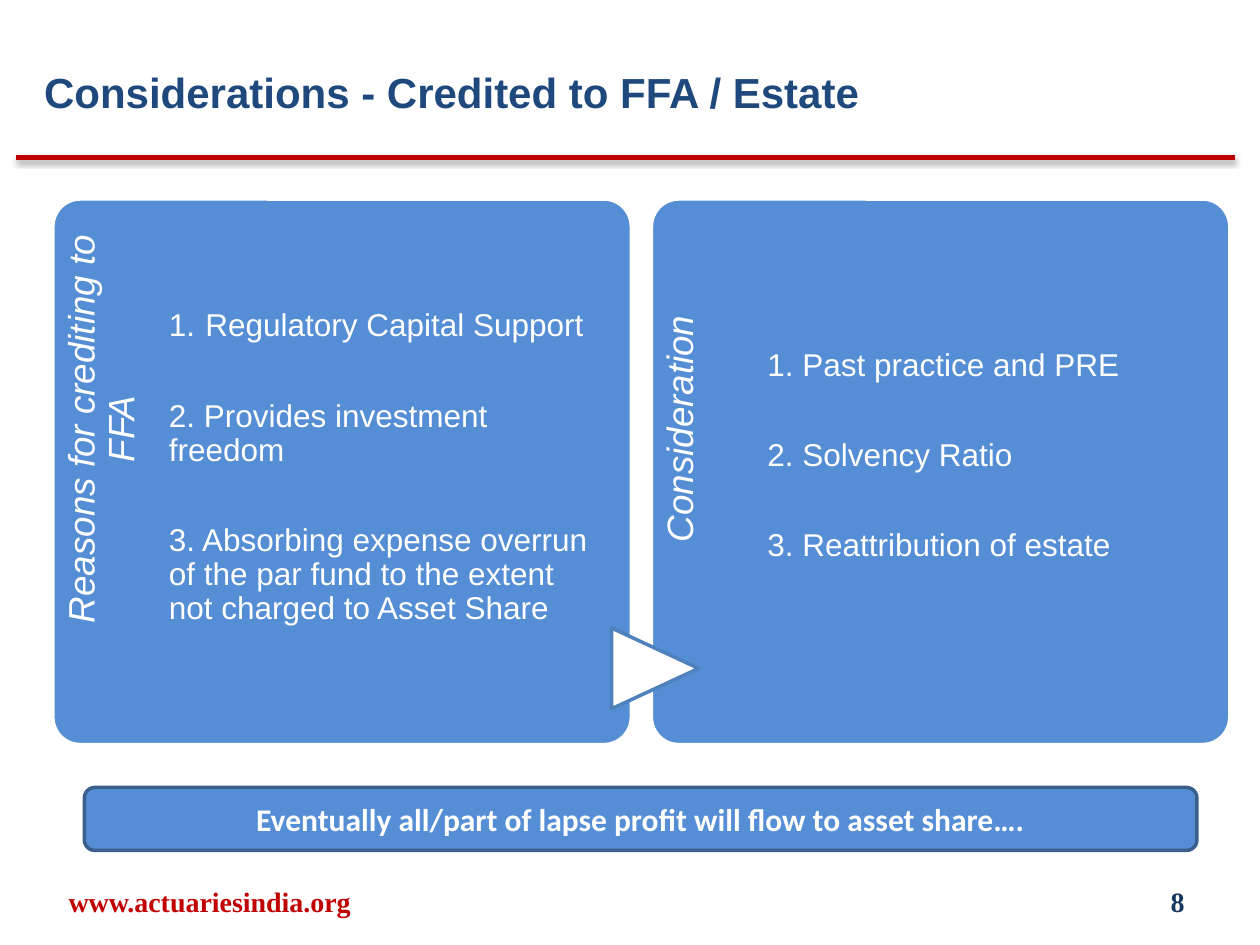
from lxml.etree import SubElement
from pptx import Presentation
from pptx.dml.color import RGBColor
from pptx.enum.shapes import MSO_CONNECTOR, MSO_SHAPE
from pptx.enum.text import MSO_ANCHOR, MSO_AUTO_SIZE, PP_ALIGN
from pptx.oxml import parse_xml
from pptx.oxml.ns import nsdecls, qn
from pptx.util import Inches, Pt

COLORS = {"red": "C00000", "navy": "17375E", "title": "1F497D", "panel": "558ED5",
          "white": "FFFFFF", "arrow": "4F81BD", "edge": "3A5F8C"}

TITLE = "Considerations - Credited to FFA / Estate"
# Each item is a list of (text, size) runs; "top" is the room above the first item.
PANELS = [
    {"label": "Reasons for crediting to FFA", "top": 0.84, "items": [
        [("1.", 18), (" ", 21), ("Regulatory Capital Support", 18)],
        [("2. Provides investment freedom", 18)],
        [("3. Absorbing expense overrun of the par fund to the extent "
          "not charged to Asset Share", 18)]]},
    {"label": "Consideration", "top": 1.19, "items": [
        [("1. Past practice and PRE", 18)],
        [("2. Solvency Ratio", 18)],
        [("3. Reattribution of estate", 18)]]},
]
CONCLUSION = "Eventually all/part of lapse profit will flow to asset share…."
FOOTERS = [("www.actuariesindia.org", 0.08, 3.17, PP_ALIGN.CENTER, "red"),
           ("8", 7.17, 2.33, PP_ALIGN.RIGHT, "navy")]

PANEL_LEFT, PANEL_TOP, PANEL_W, PANEL_H, PANEL_STEP = 0.42, 1.58, 4.59, 4.33, 4.75
LABEL_W, LABEL_H = 3.55, 0.92


def rgb(name):
    return RGBColor.from_string(COLORS[name])


def add_run(p, text, size, color, font="Arial", bold=False, italic=False):
    r = p.add_run()
    r.text = text
    r.font.size, r.font.name = Pt(size), font
    r.font.bold, r.font.italic = bold, italic
    r.font.color.rgb = rgb(color)


def place(sp, left, top, width, height):
    sp.left, sp.top = Inches(left), Inches(top)
    sp.width, sp.height = Inches(width), Inches(height)


def set_frame(tf, anchor, margins=(0.1, 0.05, 0.1, 0.05)):
    """Wrap the text, anchor it and set left, top, right, bottom margins."""
    tf.word_wrap = True
    tf.auto_size = MSO_AUTO_SIZE.NONE
    tf.vertical_anchor = anchor
    tf.margin_left, tf.margin_top, tf.margin_right, tf.margin_bottom = map(Inches, margins)


def add_box(slide, kind, box, fill, edge):
    sp = slide.shapes.add_shape(kind, *map(Inches, box))
    sp.shadow.inherit = False
    sp.fill.solid()
    sp.fill.fore_color.rgb = rgb(fill)
    sp.line.color.rgb = rgb(edge)
    sp.line.width = Pt(2)
    return sp


def add_text(slide, box, anchor, align, margins=(0.1, 0.05, 0.1, 0.05)):
    """Add a text box and return it with its first paragraph."""
    sp = slide.shapes.add_textbox(*map(Inches, box))
    set_frame(sp.text_frame, anchor, margins)
    p = sp.text_frame.paragraphs[0]
    p.alignment = align
    return sp, p


def add_rule(slide):
    line = slide.shapes.add_connector(MSO_CONNECTOR.STRAIGHT, Inches(0.13), Inches(1.25),
                                      Inches(9.8), Inches(1.25))
    line.line.color.rgb = rgb("red")
    line.line.width = Pt(3)
    line._element.spPr.append(parse_xml(
        f'<a:effectLst {nsdecls("a")}><a:outerShdw blurRad="{Pt(3.1)}" dist="{Pt(1.6)}" '
        'dir="5400000" rotWithShape="0"><a:srgbClr val="000000"><a:alpha val="38000"/>'
        '</a:srgbClr></a:outerShdw></a:effectLst>'))


def fill_list(sp, items, top):
    tf = sp.text_frame
    set_frame(tf, MSO_ANCHOR.TOP, (0, top, 0, 0))
    for i, runs in enumerate(items):
        p = tf.paragraphs[0] if i == 0 else tf.add_paragraph()
        p.line_spacing = 0.9
        p.space_before, p.space_after = Pt(0), Pt(32)
        pPr = p._p.get_or_add_pPr()
        pPr.set("marL", "0")
        pPr.set("indent", "0")
        SubElement(pPr, qn("a:buNone"))
        for text, size in runs:
            add_run(p, text, size, "white")


def add_panel(slide, body, panel, left):
    sp = add_box(slide, MSO_SHAPE.ROUNDED_RECTANGLE,
                 (left, PANEL_TOP, PANEL_W, PANEL_H), "panel", "white")
    sp.adjustments[0] = 0.05
    # The label turns about its centre, so it is placed from that point.
    cx, cy = left + LABEL_H / 2, PANEL_TOP + LABEL_W / 2
    label, p = add_text(slide, (cx - LABEL_W / 2, cy - LABEL_H / 2, LABEL_W, LABEL_H),
                        MSO_ANCHOR.TOP, PP_ALIGN.CENTER, (0, 0.08, 0.1, 0))
    label.rotation = 270
    p.line_spacing = 0.9
    add_run(p, panel["label"], 21, "white", italic=True)
    place(body, left + LABEL_H, PANEL_TOP, 3.42, PANEL_H)
    fill_list(body, panel["items"], panel["top"])
    slide.shapes._spTree.append(body._element)  # bring the list in front of its panel


def main():
    prs = Presentation()
    prs.slide_width, prs.slide_height = Inches(10), Inches(7.5)
    slide = prs.slides.add_slide(prs.slide_layouts[3])
    title, *bodies = slide.placeholders

    add_rule(slide)
    place(title, 0.25, 0.33, 8.92, 0.67)
    set_frame(title.text_frame, MSO_ANCHOR.TOP, (0.1, 0.2, 0.1, 0.05))
    p = title.text_frame.paragraphs[0]
    p.alignment = PP_ALIGN.LEFT
    add_run(p, TITLE, 24, "title", bold=True)

    for i, (body, panel) in enumerate(zip(bodies, PANELS)):
        add_panel(slide, body, panel, PANEL_LEFT + i * PANEL_STEP)

    arrow = add_box(slide, MSO_SHAPE.FLOWCHART_EXTRACT, (4.88, 4.96, 0.64, 0.69),
                    "white", "arrow")
    arrow.rotation = 90

    bar = add_box(slide, MSO_SHAPE.ROUNDED_RECTANGLE, (0.67, 6.25, 8.83, 0.5),
                  "panel", "edge")
    set_frame(bar.text_frame, MSO_ANCHOR.MIDDLE)
    p = bar.text_frame.paragraphs[0]
    p.alignment = PP_ALIGN.CENTER
    add_run(p, CONCLUSION, 18, "white", "Calibri", bold=True)

    for text, left, width, align, color in FOOTERS:
        _, p = add_text(slide, (left, 6.95, width, 0.4), MSO_ANCHOR.MIDDLE, align)
        add_run(p, text, 16, color, "Times New Roman", bold=True)

    prs.save("out.pptx")


if __name__ == "__main__":
    main()
